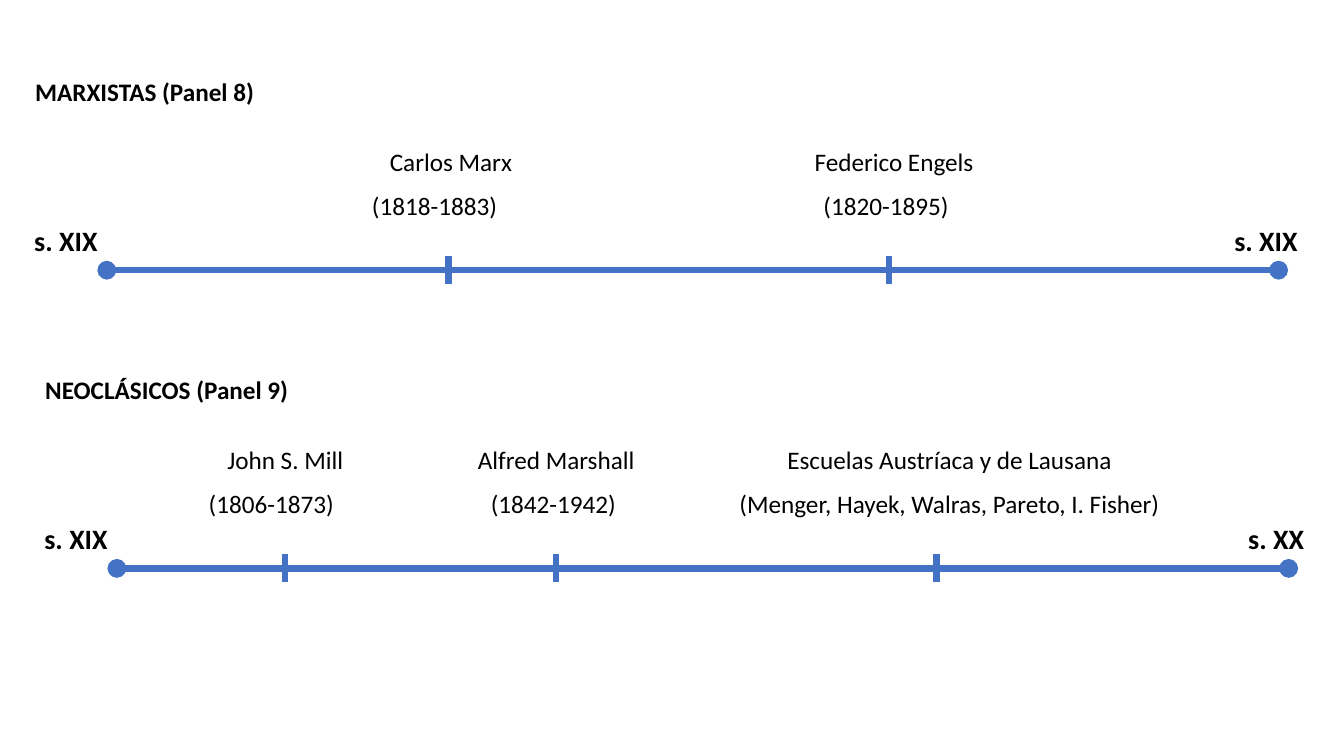
from lxml import etree
from pptx import Presentation
from pptx.dml.color import RGBColor
from pptx.enum.shapes import MSO_CONNECTOR
from pptx.enum.text import PP_ALIGN
from pptx.oxml.ns import qn
from pptx.util import Pt

BLUE = RGBColor(0x44, 0x72, 0xC4)
BLACK = RGBColor(0, 0, 0)
STRAIGHT = MSO_CONNECTOR.STRAIGHT
LEFT, CENTER = PP_ALIGN.LEFT, PP_ALIGN.CENTER

# Content: each event has a label centre, a tick position, a box width
# and lines of (text, sideways shift from the label centre)
TIMELINES = [
    {
        "title": "MARXISTAS (Panel 8)",
        "start": 76.3, "axis": 193,
        "centuries": ("s. XIX", "s. XIX"),
        "events": [
            (320.4, 320.4, 152.6, [("Carlos Marx", 1.7), ("(1818-1883)", -10)]),
            (632.9, 635, 152.6, [("Federico Engels", 5.7), ("(1820-1895)", 0)]),
        ],
    },
    {
        "title": "NEOCLÁSICOS (Panel 9)",
        "start": 83.5, "axis": 406,
        "centuries": ("s. XIX", "s. XX"),
        "events": [
            (203.8, 203.8, 152.6, [("John S. Mill", 0), ("(1806-1873)", -10)]),
            (395.3, 397.4, 152.6, [("Alfred Marshall", 2), ("(1842-1942)", 0)]),
            (678.2, 668.9, 334, [
                ("Escuelas Austríaca y de Lausana", 0),
                ("(Menger, Hayek, Walras, Pareto, I. Fisher)", 0),
            ]),
        ],
    },
]

# Format and layout
TITLE_FORMAT = {"name": "Calibri", "size": Pt(18), "bold": True}
CENTURY_FORMAT = {"name": "Calibri", "size": Pt(20), "bold": True}
EVENT_FORMAT = {"name": "Calibri", "size": Pt(18), "bold": False}
AXIS_LENGTH = 837
LINE_WIDTH = 4.5
TICK_HALF = 10
TITLE_LEFT, TITLE_RISE = 58.3, 145.4
CENTURY_WIDTH, CENTURY_RISE = 64.8, 40.4
CENTURY_START, CENTURY_END = -29.2, -9
EVENT_RISE = 92.3


def add_text(slide, left, top, width, height, lines, font_format,
             alignment=CENTER, spacing=1.0, wrap=False):
    box = slide.shapes.add_textbox(Pt(left), Pt(top), Pt(width), Pt(height))
    frame = box.text_frame
    frame.word_wrap = wrap
    for index, (text, shift) in enumerate(lines):
        paragraph = frame.add_paragraph() if index else frame.paragraphs[0]
        paragraph.alignment = alignment
        paragraph.line_spacing = spacing
        paragraph.space_after = Pt(10)
        # A margin on one side moves centred text by half its size
        if shift:
            side = "marL" if shift > 0 else "marR"
            margin = Pt(2 * abs(shift))
            paragraph._p.get_or_add_pPr().set(side, str(margin))
        run = paragraph.add_run()
        run.text = text
        run.font.color.rgb = BLACK
        for name, value in font_format.items():
            setattr(run.font, name, value)


def add_line(slide, x1, y1, x2, y2, oval_ends=False):
    line = slide.shapes.add_connector(STRAIGHT, Pt(x1), Pt(y1), Pt(x2), Pt(y2))
    line.line.color.rgb = BLUE
    line.line.width = Pt(LINE_WIDTH)
    if oval_ends:
        outline = line.line._get_or_add_ln()
        for end in ("a:headEnd", "a:tailEnd"):
            etree.SubElement(outline, qn(end), type="oval")
    etree.SubElement(line._element.spPr, qn("a:effectLst"))


def add_timeline(slide, timeline):
    start, axis = timeline["start"], timeline["axis"]
    end = start + AXIS_LENGTH

    # Title and axis
    add_text(slide, start - TITLE_LEFT, axis - TITLE_RISE, 190, 31,
             [(timeline["title"], 0)], TITLE_FORMAT, LEFT, 1.15)
    add_line(slide, start, axis, end, axis, oval_ends=True)

    # Centuries at both ends
    centers = (start + CENTURY_START, end + CENTURY_END)
    for text, center in zip(timeline["centuries"], centers):
        add_text(slide, center - CENTURY_WIDTH / 2, axis - CENTURY_RISE,
                 CENTURY_WIDTH, 33.8, [(text, 0)], CENTURY_FORMAT, spacing=1.15)

    # Events with their ticks
    for center, tick, width, lines in timeline["events"]:
        add_text(slide, center - width / 2, axis - EVENT_RISE, width, 61.2,
                 lines, EVENT_FORMAT, wrap=True)
        add_line(slide, tick, axis + TICK_HALF, tick, axis - TICK_HALF)


def main():
    presentation = Presentation()
    presentation.slide_width = Pt(960)
    presentation.slide_height = Pt(540)
    slide = presentation.slides.add_slide(presentation.slide_layouts[6])
    for timeline in TIMELINES:
        add_timeline(slide, timeline)
    presentation.save("out.pptx")


if __name__ == "__main__":
    main()
